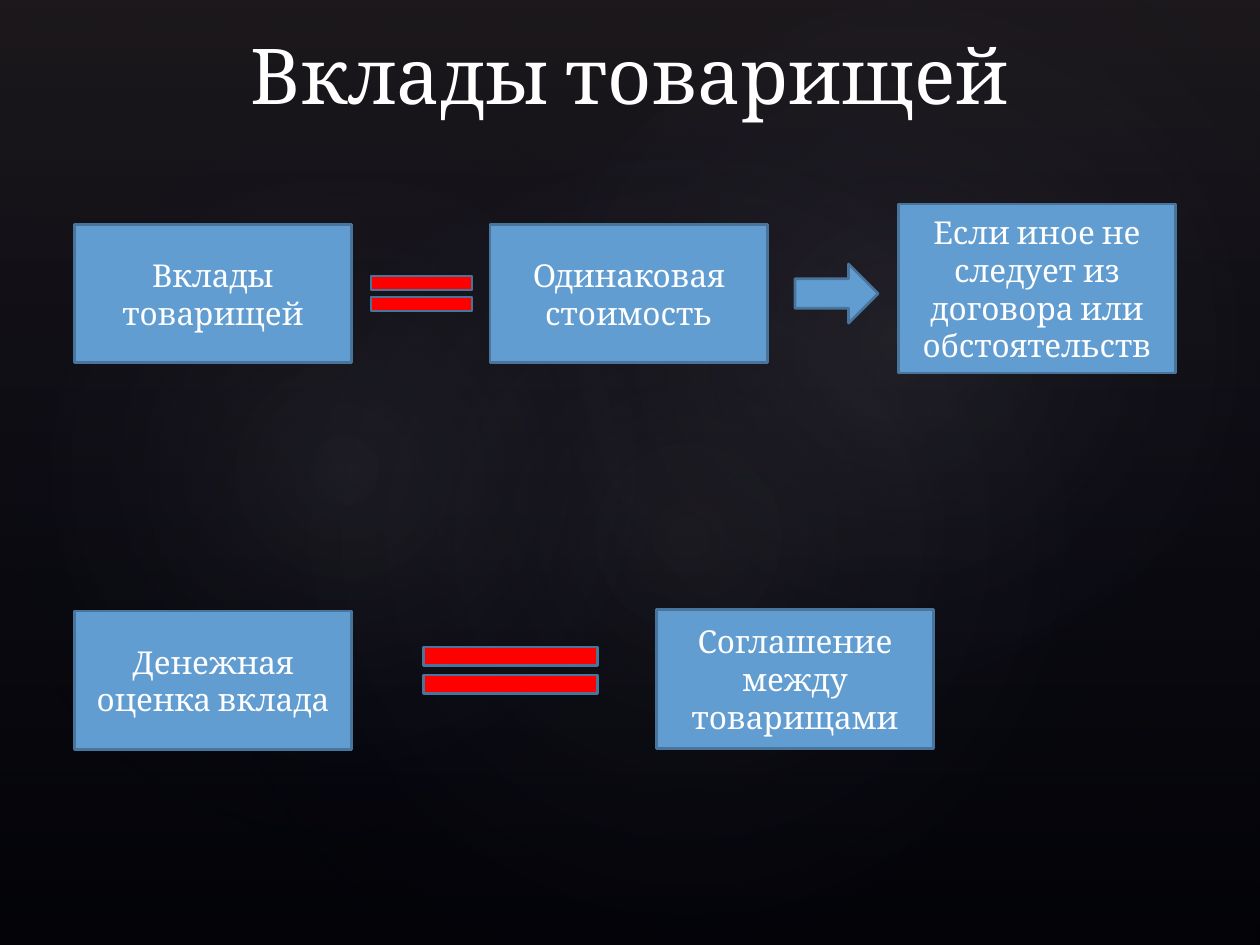
from lxml import etree
from pptx import Presentation
from pptx.dml.color import RGBColor
from pptx.enum.shapes import MSO_SHAPE
from pptx.enum.text import MSO_ANCHOR, PP_ALIGN
from pptx.oxml import parse_xml
from pptx.oxml.ns import nsdecls
from pptx.util import Inches, Pt

RECT, OVAL = MSO_SHAPE.RECTANGLE, MSO_SHAPE.OVAL
EQUAL, ARROW = MSO_SHAPE.MATH_EQUAL, MSO_SHAPE.RIGHT_ARROW
CENTER, MIDDLE, BOTTOM = PP_ALIGN.CENTER, MSO_ANCHOR.MIDDLE, MSO_ANCHOR.BOTTOM

WIDTH, HEIGHT = 10, 7.5
FONT = "Cambria"
BLACK, WHITE, BLUE, EDGE, RED = "000000", "FFFFFF", "629DD1", "49749B", "FF0000"

TITLE = "Вклады товарищей"
BOX_W, BOX_H = 2.2, 1.1
ROW_1, ROW_2 = 2.33, 5.4

BOXES = [
    ("Вклады товарищей", 0.59, ROW_1, BOX_H),
    ("Одинаковая стоимость", 3.89, ROW_1, BOX_H),
    ("Если иное не следует из договора или обстоятельств", 7.13, ROW_1 - 0.04, 1.34),
    ("Денежная оценка вклада", 0.59, ROW_2, BOX_H),
    ("Соглашение между товарищами", 5.21, ROW_2 - 0.01, BOX_H),
]
SIGNS = [
    (EQUAL, 2.8, ROW_1, 1.09, 0.47, RED),
    (ARROW, 6.31, ROW_1, 0.66, 0.47, BLUE),
    (EQUAL, 3.11, ROW_2 - 0.08, 1.88, 0.63, RED),
]
BACKDROP_STOPS = [(0, "504652", 36), (100, "242852", 10)]
GLOWS = [
    (1.5, 1.14, 7.92, 6.24, 328.7, 7),
    (-0.3, 1.28, 6.06, 4.9, 294.3, 8),
    (3.58, 0.13, 7.09, 5.2, 328.7, 8),
]
LINEAR = '<a:lin ang="5400000" scaled="0"/>'
RADIAL = '<a:path path="circle"><a:fillToRect l="50000" t="50000" r="50000" b="50000"/></a:path>'


def color(hex_value):
    return RGBColor.from_string(hex_value)


def add_shape(kind, x, y, w, h):
    s = slide.shapes.add_shape(kind, Inches(x), Inches(y), Inches(w), Inches(h))
    s.shadow.inherit = False
    return s


def fill_gradient(s, stops, direction):
    s.line.fill.background()
    s.fill.solid()
    solid = s.element.spPr.find("{*}solidFill")
    stop_xml = "".join(
        f'<a:gs pos="{pos * 1000}"><a:srgbClr val="{rgb}">'
        f'<a:alpha val="{alpha * 1000}"/></a:srgbClr></a:gs>'
        for pos, rgb, alpha in stops
    )
    gradient = parse_xml(
        f'<a:gradFill {nsdecls("a")} rotWithShape="1">'
        f"<a:gsLst>{stop_xml}</a:gsLst>{direction}</a:gradFill>"
    )
    solid.getparent().replace(solid, gradient)


def add_figure(kind, x, middle, w, h, fill):
    s = add_shape(kind, x, middle - h / 2, w, h)
    s.fill.solid()
    s.fill.fore_color.rgb = color(fill)
    s.line.color.rgb = color(EDGE)
    s.line.width = Pt(1.5)
    return s


def write(s, text, size, anchor):
    tf = s.text_frame
    tf.word_wrap = True
    tf.vertical_anchor = anchor
    p = tf.paragraphs[0]
    p.alignment = CENTER
    r = p.add_run()
    r.text = text
    r.font.name = FONT
    r.font.size = Pt(size)
    r.font.color.rgb = color(WHITE)


prs = Presentation()
prs.slide_width, prs.slide_height = Inches(WIDTH), Inches(HEIGHT)
slide = prs.slides.add_slide(prs.slide_layouts[6])
slide.background.fill.solid()
slide.background.fill.fore_color.rgb = color(BLACK)

fill_gradient(add_shape(RECT, 0, 0, WIDTH, HEIGHT), BACKDROP_STOPS, LINEAR)
for x, y, w, h, angle, alpha in GLOWS:
    s = add_shape(OVAL, x, y, w, h)
    s.rotation = angle
    fill_gradient(s, [(0, "C4BCC6", alpha), (58, "242852", 0)], RADIAL)

title = slide.shapes.add_textbox(0, 0, Inches(WIDTH), Inches(1))
write(title, TITLE, 44, BOTTOM)

for text, x, middle, h in BOXES:
    write(add_figure(RECT, x, middle, BOX_W, h, BLUE), text, 18, MIDDLE)
for sign in SIGNS:
    add_figure(*sign)

prs.save("out.pptx")
